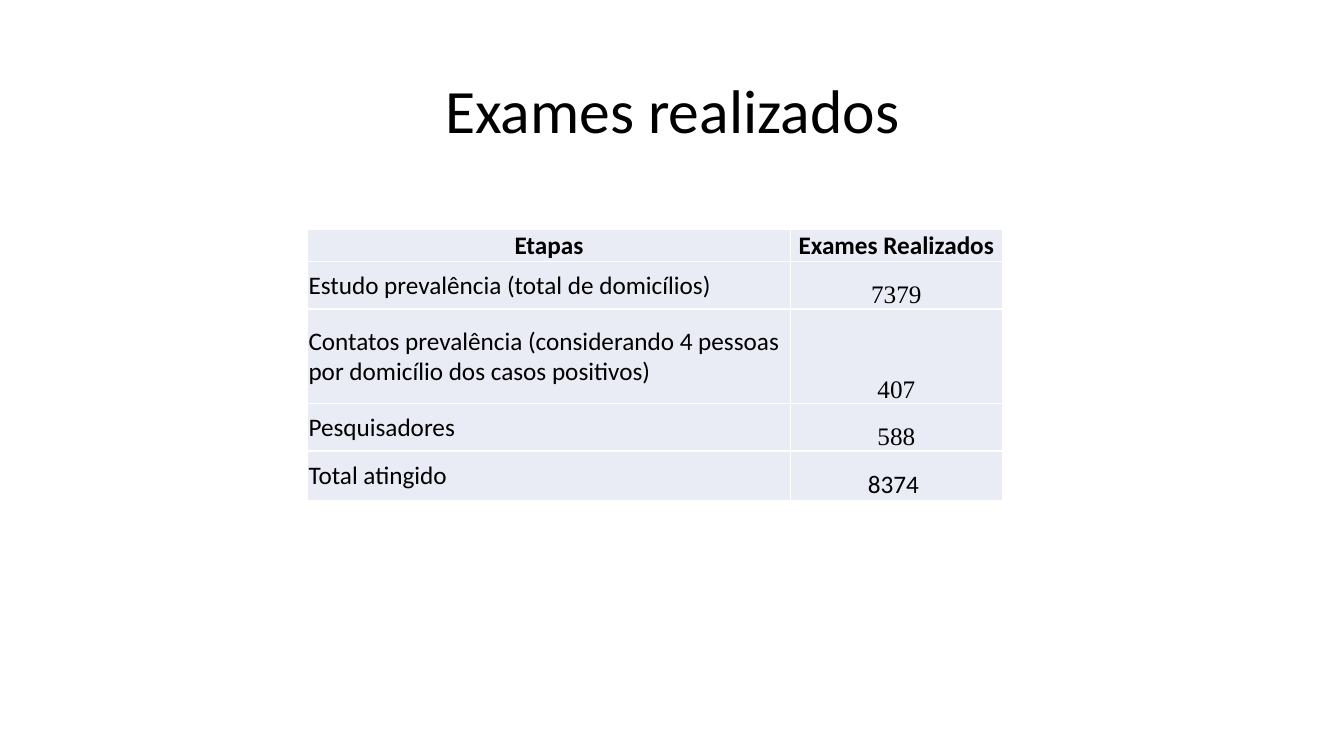
from lxml import etree
from pptx import Presentation
from pptx.dml.color import RGBColor
from pptx.enum.text import MSO_ANCHOR, PP_ALIGN
from pptx.oxml.ns import qn
from pptx.util import Inches, Pt

LEFT, CENTER = PP_ALIGN.LEFT, PP_ALIGN.CENTER
MIDDLE, BOTTOM = MSO_ANCHOR.MIDDLE, MSO_ANCHOR.BOTTOM
BODY_FONT, NUMBER_FONT = "Calibri", "Times New Roman"


def write(frame, text, size=18, font=BODY_FONT, bold=False, align=LEFT, spacing=1.0):
    frame.word_wrap = True
    paragraph = frame.paragraphs[0]
    paragraph.alignment = align
    paragraph.line_spacing = spacing
    run = paragraph.add_run()
    run.text = text
    run.font.size = Pt(size)
    run.font.name = font
    run.font.bold = bold
    run.font.color.rgb = RGBColor.from_string("000000")


def add_borders(cell, color, width):
    properties = cell._tc.get_or_add_tcPr()
    for position, side in enumerate(("a:lnL", "a:lnR", "a:lnT", "a:lnB")):
        line = etree.Element(qn(side), w=str(Pt(width)))
        fill = etree.SubElement(line, qn("a:solidFill"))
        etree.SubElement(fill, qn("a:srgbClr"), val=color)
        properties.insert(position, line)


prs = Presentation()
prs.slide_width, prs.slide_height = Inches(13.33), Inches(7.5)
slide = prs.slides.add_slide(prs.slide_layouts[5])

title = slide.shapes.title
title.left, title.top = Inches(0.92), Inches(0.4)
title.width, title.height = Inches(11.5), Inches(1.45)
title.text_frame.vertical_anchor = MIDDLE
write(title.text_frame, "Exames realizados", size=44, align=CENTER, spacing=0.9)

exams = [
    ("Etapas", "Exames Realizados", BODY_FONT),
    ("Estudo prevalência (total de domicílios)", "7379", NUMBER_FONT),
    ("Contatos prevalência (considerando 4 pessoas por domicílio dos casos positivos)",
     "407", NUMBER_FONT),
    ("Pesquisadores", "588", NUMBER_FONT),
    ("Total atingido", "8374 ", BODY_FONT),
]
column_widths = [4.79, 2.1]
row_heights = [0.31, 0.47, 0.94, 0.47, 0.49]

exam_table = slide.shapes.add_table(
    len(exams), len(column_widths), Inches(3.05), Inches(2.28),
    Inches(sum(column_widths)), Inches(sum(row_heights))).table
for column, width in zip(exam_table.columns, column_widths):
    column.width = Inches(width)
for row, height in zip(exam_table.rows, row_heights):
    row.height = Inches(height)

for r, (stage, count, count_font) in enumerate(exams):
    header = r == 0
    for c, (text, font) in enumerate([(stage, BODY_FONT), (count, count_font)]):
        cell = exam_table.cell(r, c)
        cell.margin_left = cell.margin_right = cell.margin_top = Inches(0.01)
        cell.margin_bottom = 0
        cell.vertical_anchor = BOTTOM if c and not header else MIDDLE
        cell.fill.solid()
        cell.fill.fore_color.rgb = RGBColor.from_string("E9EBF5")
        add_borders(cell, "FFFFFF", 1)
        write(cell.text_frame, text, font=font, bold=header,
              align=CENTER if c or header else LEFT)

prs.save("out.pptx")
